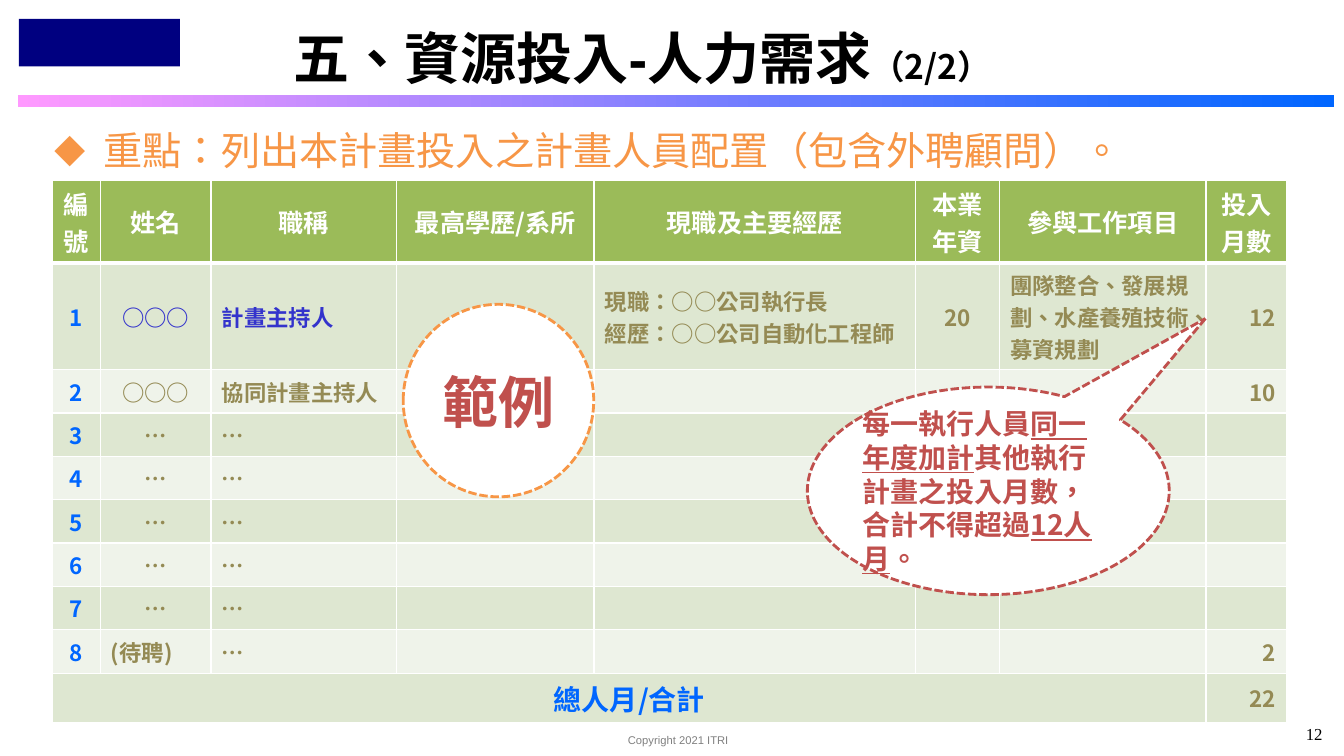
from lxml import etree
from pptx import Presentation
from pptx.dml.color import RGBColor
from pptx.enum.dml import MSO_LINE
from pptx.enum.shapes import MSO_SHAPE
from pptx.enum.text import MSO_ANCHOR, PP_ALIGN
from pptx.oxml.ns import qn
from pptx.util import Pt

LEFT, CENTER, RIGHT = PP_ALIGN.LEFT, PP_ALIGN.CENTER, PP_ALIGN.RIGHT
TOP, MIDDLE = MSO_ANCHOR.TOP, MSO_ANCHOR.MIDDLE
RECTANGLE, OVAL = MSO_SHAPE.RECTANGLE, MSO_SHAPE.OVAL
CALLOUT, DASH = MSO_SHAPE.OVAL_CALLOUT, MSO_LINE.SQUARE_DOT
CJK = "Noto Sans CJK SC"
BLACK, WHITE, NAVY, GRAY = "000000", "FFFFFF", "000080", "808080"
BLUE, INDIGO, OLIVE, ORANGE, RED = "0066FF", "3333CC", "948A54", "F79646", "C0504D"
HEADER_FILL, BAND_FILLS = "9BBB59", ("DEE7D1", "EFF3EA")

# Content
TITLE = [("五、資源投入-人力需求", {"font": "Arial"}), ("（2/2）", {"size": 24})]
KEY_POINT = "重點：列出本計畫投入之計畫人員配置（包含外聘顧問）。"
HEADERS = ["編號", "姓名", "職稱", "最高學歷/系所", "現職及主要經歷",
           "本業年資", "參與工作項目", "投入月數"]
STAFF = [
    ("○○○", "計畫主持人", "", "現職：○○公司執行長\n經歷：○○公司自動化工程師",
     "20", "團隊整合、發展規劃、水產養殖技術、募資規劃", "12"),
    ("○○○", "協同計畫主持人", "", "", "", "", "10"),
    *[("…", "…", "", "", "", "", "")] * 5,
    ("(待聘)", "…", "", "", "", "", "2"),
]
TOTAL_LABEL, TOTAL_MONTHS = "總人月/合計", "22"
SAMPLE = "範例"
RULE = [("每一執行人員", {}), ("同一年度加計", {"underline": True}),
        ("其他執行計畫之投入月數，合計不得超過", {}),
        ("12人月", {"underline": True}), ("。", {})]

# Table layout
TABLE_LEFT, TABLE_TOP = 37.8, 129
COLUMN_WIDTHS = [33.8, 79.2, 132.5, 141.1, 229.7, 59.8, 147.6, 57.6]
ROW_HEIGHTS = [59, 76] + [31] * 7 + [35]
COLUMN_ALIGNS = [CENTER, CENTER, LEFT, LEFT, LEFT, CENTER, LEFT, RIGHT]
TIGHT = (1.4, 0.7)


def rgb(value):
    return RGBColor.from_string(value)


def write_text(frame, text, size=16, color=OLIVE, font=CJK, bold=False,
               align=LEFT, line_spacing=None):
    """Text is a string with one paragraph a line, or a list of (text, format) runs."""
    lines = [[(line, {})] for line in text.split("\n")] if isinstance(text, str) else [text]
    for index, runs in enumerate(lines):
        paragraph = frame.paragraphs[0] if index == 0 else frame.add_paragraph()
        paragraph.alignment = align
        if line_spacing:
            paragraph.line_spacing = line_spacing
        for words, extra in runs:
            run = paragraph.add_run()
            run.text = words
            run.font.size = Pt(extra.get("size", size))
            run.font.bold = bold
            run.font.color.rgb = rgb(color)
            run.font.name = extra.get("font", font)
            if extra.get("underline"):
                run.font.underline = True
            properties = run._r.get_or_add_rPr()
            properties.set("lang", "zh-TW")
            etree.SubElement(properties, qn("a:ea"), typeface=CJK)


def set_frame(frame, margins, anchor, wrap=True):
    frame.word_wrap = wrap
    frame.vertical_anchor = anchor
    frame.margin_left = frame.margin_right = Pt(margins[0])
    frame.margin_top = frame.margin_bottom = Pt(margins[1])


def add_text_box(slide, box, text, margins=(7.2, 3.6), anchor=TOP, wrap=True, **style):
    frame = slide.shapes.add_textbox(*map(Pt, box)).text_frame
    set_frame(frame, margins, anchor, wrap)
    write_text(frame, text, **style)
    return frame


def add_shape(slide, kind, box, fill=WHITE, line=None):
    shape = slide.shapes.add_shape(kind, *map(Pt, box))
    shape.shadow.inherit = False
    shape.fill.solid()
    shape.fill.fore_color.rgb = rgb(fill)
    if line:
        shape.line.color.rgb = rgb(line)
        shape.line.width = Pt(2)
        shape.line.dash_style = DASH
    else:
        shape.line.fill.background()
    set_frame(shape.text_frame, TIGHT, MIDDLE)
    return shape


def format_cell(cell, row):
    """White borders, thicker under the header, and a banded fill."""
    properties = cell._tc.get_or_add_tcPr()
    widths = {"lnL": 1, "lnR": 1, "lnT": 3 if row == 1 else 1, "lnB": 3 if row == 0 else 1}
    for side, width in widths.items():
        line = etree.SubElement(properties, qn("a:" + side), w=str(Pt(width)))
        fill = etree.SubElement(line, qn("a:solidFill"))
        etree.SubElement(fill, qn("a:srgbClr"), val=WHITE)
    cell.fill.solid()
    cell.fill.fore_color.rgb = rgb(BAND_FILLS[(row - 1) % 2] if row else HEADER_FILL)
    cell.vertical_anchor = MIDDLE


def cell_style(row, column, text):
    if row == 0:
        return {"size": 18, "color": WHITE, "align": CENTER}
    if text == TOTAL_LABEL:
        return {"size": 20, "color": BLUE, "align": CENTER}
    color = BLUE if column == 0 else INDIGO if row == 1 and column < 3 else OLIVE
    align = LEFT if text == "(待聘)" else COLUMN_ALIGNS[column]
    return {"color": color, "align": align}


def add_staff_table(slide):
    rows = [HEADERS]
    rows += [(str(number), *person) for number, person in enumerate(STAFF, 1)]
    rows.append((TOTAL_LABEL, *[""] * 6, TOTAL_MONTHS))
    table = slide.shapes.add_table(
        len(rows), len(HEADERS), Pt(TABLE_LEFT), Pt(TABLE_TOP),
        Pt(sum(COLUMN_WIDTHS)), Pt(sum(ROW_HEIGHTS))).table
    for column, width in zip(table.columns, COLUMN_WIDTHS):
        column.width = Pt(width)
    for table_row, height in zip(table.rows, ROW_HEIGHTS):
        table_row.height = Pt(height)
    for row, texts in enumerate(rows):
        for column, text in enumerate(texts):
            cell = table.cell(row, column)
            format_cell(cell, row)
            if row and column:
                cell.margin_left = cell.margin_right = Pt(7.7)
            if text:
                write_text(cell.text_frame, text, bold=True, **cell_style(row, column, text))
    last = len(rows) - 1
    table.cell(last, 0).merge(table.cell(last, len(HEADERS) - 2))


def main():
    presentation = Presentation()
    presentation.slide_width, presentation.slide_height = Pt(960), Pt(540)
    slide = presentation.slides.add_slide(presentation.slide_layouts[6])

    # Header band, emblem block and footer
    band = add_shape(slide, RECTANGLE, (13, 68, 940, 8.5))
    band.fill.gradient()
    band.fill.gradient_angle = 0
    for stop, color in zip(band.fill.gradient_stops, ("FF99FF", BLUE)):
        stop.color.rgb = rgb(color)
    add_shape(slide, RECTANGLE, (13.5, 13.5, 115, 34), fill=NAVY)
    add_text_box(slide, (441.4, 520.5, 87, 17), "Copyright 2021 ITRI",
                 wrap=False, size=8, color=GRAY, font="Arial")
    add_text_box(slide, (910.8, 513.4, 41, 24), "12", size=12, color=BLACK,
                 font="Times New Roman", align=RIGHT)

    # Title and key point
    add_text_box(slide, (130.3, 10.8, 656.6, 49.7), TITLE, anchor=MIDDLE, size=40,
                 color=BLACK, bold=True, align=CENTER, line_spacing=1.2)
    key_point = add_text_box(slide, (37.4, 89.3, 873.4, 39.6), KEY_POINT,
                             margins=TIGHT, size=28, color=ORANGE)
    bullet = key_point.paragraphs[0]._p.get_or_add_pPr()
    bullet.set("marL", str(Pt(35.3)))
    bullet.set("indent", str(-Pt(35.3)))
    etree.SubElement(bullet, qn("a:buSzPct"), val="80000")
    etree.SubElement(bullet, qn("a:buFont"), typeface=CJK)
    etree.SubElement(bullet, qn("a:buChar"), char="◆")

    add_staff_table(slide)

    # Sample badge and rule callout
    badge = add_shape(slide, OVAL, (288, 217.4, 136.1, 137.5), line=ORANGE)
    write_text(badge.text_frame, SAMPLE, size=40, color=RED, bold=True, align=CENTER)
    callout = add_shape(slide, CALLOUT, (576.7, 276.5, 258.5, 148.3), line=RED)
    callout.adjustments[0], callout.adjustments[1] = 0.6, -0.83
    write_text(callout.text_frame, RULE, size=20, color=RED, bold=True)

    presentation.save("out.pptx")


if __name__ == "__main__":
    main()
